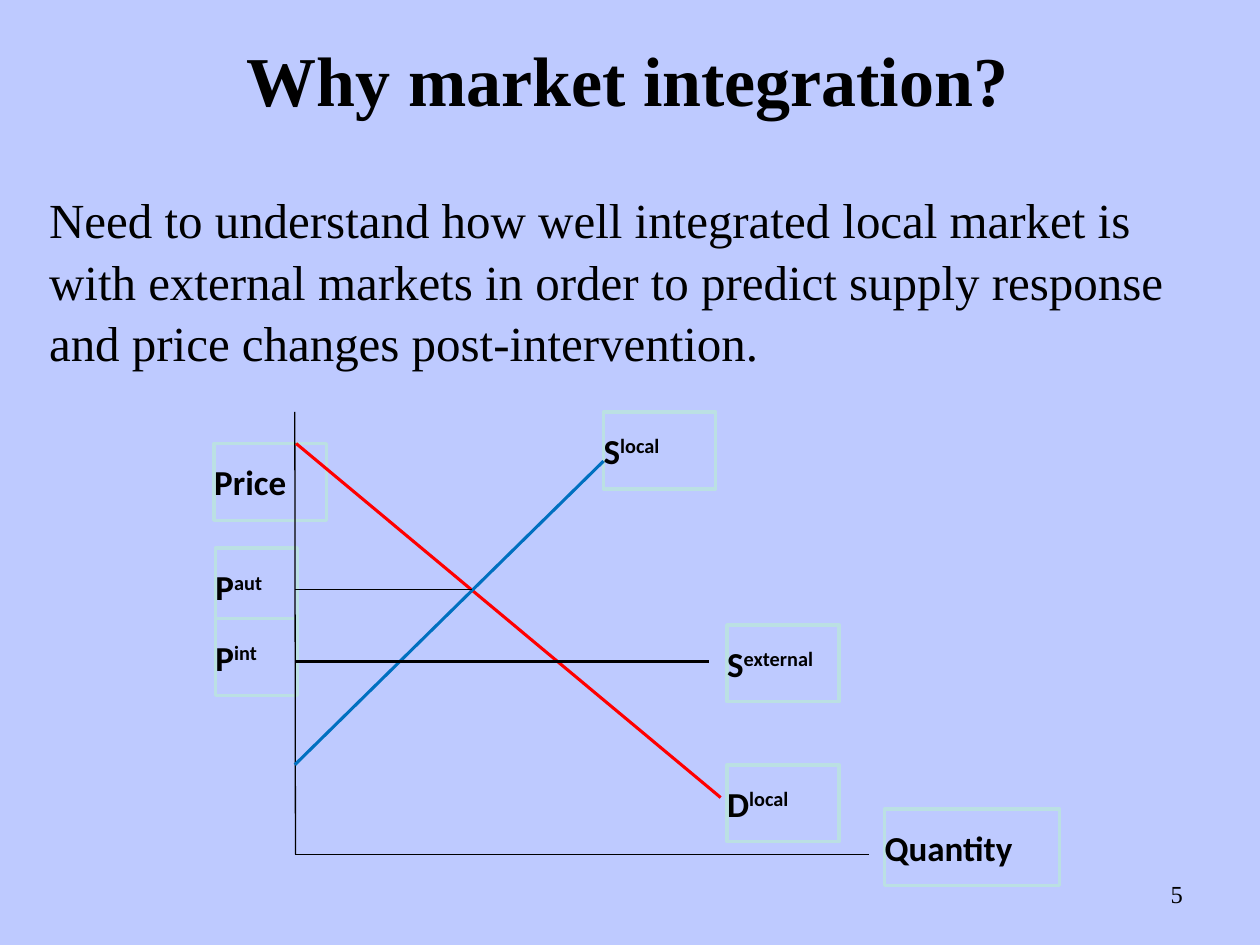
from lxml.etree import SubElement
from pptx import Presentation
from pptx.dml.color import RGBColor
from pptx.enum.dml import MSO_LINE
from pptx.enum.shapes import MSO_CONNECTOR, MSO_SHAPE
from pptx.enum.text import MSO_ANCHOR as Anchor, MSO_AUTO_SIZE as AutoSize, PP_ALIGN as Align
from pptx.oxml.ns import qn
from pptx.util import Inches, Pt

COLUMNS, ROWS = 100, 75  # grid over the slide
BACKGROUND, BORDER, INK = "BECAFF", "BBE0E3", "000000"
DEMAND, SUPPLY = "FF0000", "0070C0"


def color(value):
    return RGBColor.from_string(value)


def write(para, text, size=20, font="Calibri", bold=False, ink=INK, raised=False):
    span = para.add_run()
    span.text = text
    span.font.size, span.font.name, span.font.bold = Pt(size), font, bold
    span.font.color.rgb = color(ink)
    if raised:
        span.font._element.set("baseline", "30000")


class SlideBuilder:
    serif = "Times New Roman"

    def __init__(self, deck, page):
        self.deck, self.page = deck, page
        page.background.fill.solid()
        page.background.fill.fore_color.rgb = color(BACKGROUND)

    def spot(self, column, row):
        return (int(self.deck.slide_width * column / COLUMNS),
                int(self.deck.slide_height * row / ROWS))

    def frame(self, box, anchor, margins):
        frame = box.text_frame
        frame.word_wrap, frame.auto_size = True, AutoSize.NONE
        frame.vertical_anchor = anchor
        (frame.margin_left, frame.margin_top,
         frame.margin_right, frame.margin_bottom) = map(Inches, margins)
        return frame.paragraphs[0]

    def placeholder(self, box, at, extent, text, anchor, align, indent=0, before=0,
                    spacing=1, **style):
        box.left, box.top = self.spot(*at)
        box.width, box.height = self.spot(*extent)
        para = self.frame(box, anchor, (0.06, 0.06, 0.14, 0.06))
        para.alignment, para.line_spacing = align, spacing
        para.space_before = Pt(before)
        props = para._p.get_or_add_pPr()
        props.set("marL", str(Inches(indent)))
        props.set("indent", "0")
        SubElement(props, qn("a:buNone"))
        write(para, text, font=self.serif, **style)

    def label(self, column, row, width, text, superscript=""):
        box = self.page.shapes.add_shape(
            MSO_SHAPE.RECTANGLE, *self.spot(column, row), *self.spot(width, 6.1))
        box.shadow.inherit = False
        box.fill.solid()
        box.fill.fore_color.rgb = color(BACKGROUND)
        box.line.color.rgb, box.line.width = color(BORDER), Pt(2)
        para = self.frame(box, Anchor.MIDDLE, (0, 0.05, 0, 0.05))
        para.alignment, para.space_after = Align.LEFT, Pt(10)
        write(para, text, bold=True)
        if superscript:
            write(para, superscript, bold=True, raised=True)

    def line(self, start, end, ink=INK, width=1.75, dash=None):
        line = self.page.shapes.add_connector(
            MSO_CONNECTOR.STRAIGHT, *self.spot(*start), *self.spot(*end))
        line.line.color.rgb, line.line.width = color(ink), Pt(width)
        if dash:
            line.line.dash_style = dash
        SubElement(line._element.spPr, qn("a:effectLst"))

    def number(self, at, extent, text):
        box = self.page.shapes.add_textbox(*self.spot(*at), *self.spot(*extent))
        box.text_frame.word_wrap = False
        para = box.text_frame.paragraphs[0]
        para.alignment = Align.CENTER
        write(para, text, size=14, font=self.serif)


def main():
    deck = Presentation()
    deck.slide_width, deck.slide_height = Inches(10), Inches(7.5)
    page = deck.slides.add_slide(deck.slide_layouts[1])
    builder = SlideBuilder(deck, page)

    # Title and statement
    builder.placeholder(page.shapes.title, (5, 0), (90, 12.5), "Why market integration?",
                        Anchor.MIDDLE, Align.CENTER, indent=0.04, size=40, bold=True)
    builder.placeholder(
        page.placeholders[1], (3.3, 14.2), (92.5, 60.8),
        "Need to understand how well integrated local market is with external markets "
        "in order to predict supply response and price changes post-intervention.",
        Anchor.TOP, Align.LEFT, before=7, spacing=1.05, size=28)

    # Labels of axes, curves and prices
    for label in (
        (17, 35.2, 8.9, "Price"),
        (70.2, 64.2, 13.9, "Quantity"),
        (47.9, 32.7, 8.9, "S", "local"),
        (57.7, 49.6, 8.9, "S", "external"),
        (57.7, 60.7, 8.9, "D", "local"),
        (17.1, 43.5, 6.5, "P", "aut"),
        (17.1, 49.1, 6.5, "P", "int"),
    ):
        builder.label(*label)

    # Axes
    origin = (23.45, 67.8)
    builder.line((23.4, 32.7), origin, width=0.75)
    builder.line(origin, (69, 67.8), width=0.75)

    # Demand, local supply, external supply and the autarky price
    builder.line((23.5, 35.2), (57.2, 63.3), DEMAND)
    builder.line((23.4, 60.7), (47.9, 36.6), SUPPLY)
    builder.line((23.5, 52.5), (56.3, 52.5))
    builder.line((37.4, 46.8), (23.4, 46.8), width=0.25, dash=MSO_LINE.ROUND_DOT)

    # Page number
    builder.number((91.8, 69.3), (3.2, 3.2), "5")

    deck.save("out.pptx")


if __name__ == "__main__":
    main()
